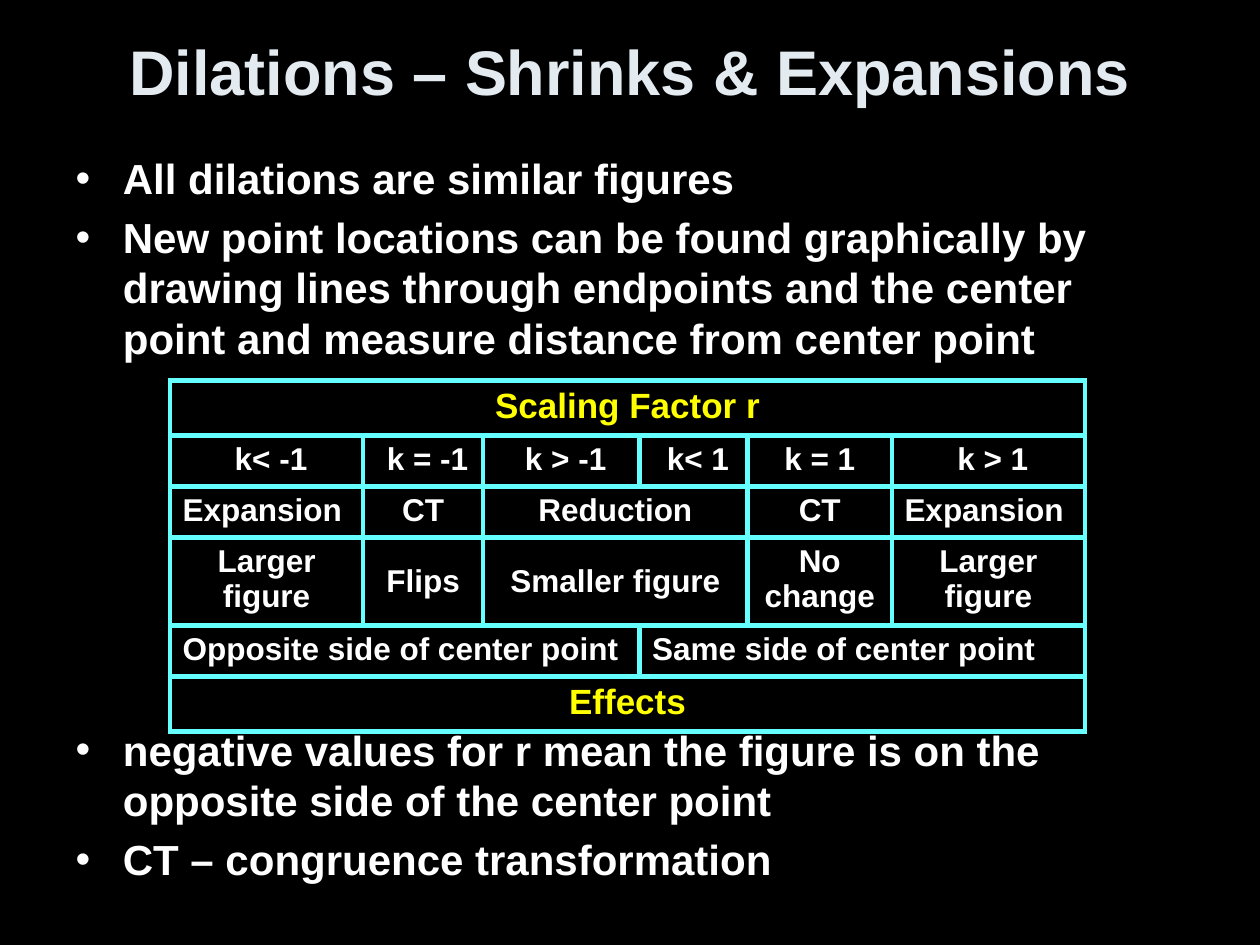
import pptx
import pptx.dml.color
import pptx.enum.text
import pptx.oxml
import pptx.oxml.ns
import pptx.util
from lxml import etree

Cm = pptx.util.Cm
Pt = pptx.util.Pt
ALIGN = pptx.enum.text.PP_ALIGN
ANCHOR = pptx.enum.text.MSO_ANCHOR

BLACK, WHITE, PALE = "000000", "FFFFFF", "E3EBF1"
YELLOW, CYAN = "FFFF00", "66FFFF"

BULLETS = [
    "All dilations are similar figures",
    "New point locations can be found graphically by drawing lines through "
    "endpoints and the center point and measure distance from center point",
    "negative values for r mean the figure is on the opposite side of the center point",
    "CT – congruence transformation",
]
BULLET_GAP = 4.8
TABLE_GAP = 206.6

COLUMN_WIDTHS = [3.89, 2.42, 3.15, 2.18, 2.91, 3.89]
ROW_HEIGHTS = [1.11, 1.03, 1.03, 1.77, 1.03, 1.11]
# Each row lists (text, number of columns it spans).
SCALING_ROWS = [
    [("Scaling Factor r", 6)],
    [(" k< -1", 1), (" k = -1", 1), (" k > -1", 1), (" k< 1", 1), ("k = 1", 1), (" k > 1", 1)],
    [("Expansion", 1), ("CT", 1), ("Reduction", 2), ("CT", 1), ("Expansion", 1)],
    [("Larger\nfigure", 1), ("Flips", 1), ("Smaller figure", 2), ("No\nchange", 1),
     ("Larger\nfigure", 1)],
    [("Opposite side of center point", 3), ("Same side of center point", 3)],
    [("Effects", 6)],
]
HEADINGS = {"Scaling Factor r", "Effects"}
LEFT_ALIGNED = {"Expansion", "Opposite side of center point", "Same side of center point"}
MIDDLE_ANCHORED = {"Flips", "Smaller figure"}


def color(value):
    return pptx.dml.color.RGBColor.from_string(value)


class SlideBuilder:
    font_name = "Arial"
    border_width = Pt(3)

    def __init__(self, page):
        self.page = page

    def background(self, value):
        fill = self.page.background.fill
        fill.solid()
        fill.fore_color.rgb = color(value)

    def style(self, paragraph, size, value, align):
        paragraph.alignment = align
        font = paragraph.font
        font.name, font.size, font.bold = self.font_name, Pt(size), True
        font.color.rgb = color(value)

    def place(self, box, left, top, width, height):
        box.left, box.top, box.width, box.height = Cm(left), Cm(top), Cm(width), Cm(height)
        box.text_frame.auto_size = pptx.enum.text.MSO_AUTO_SIZE.NONE

    def title(self, text, *bounds):
        box = self.page.shapes.title
        self.place(box, *bounds)
        box.text_frame.vertical_anchor = ANCHOR.MIDDLE
        paragraph = box.text_frame.paragraphs[0]
        paragraph.text = text
        self.style(paragraph, 36, PALE, ALIGN.CENTER)

    def bullets(self, lines, gaps, *bounds):
        box = self.page.placeholders[1]
        self.place(box, *bounds)
        box.text_frame.text = "\n".join(lines)
        for paragraph, gap in zip(box.text_frame.paragraphs, gaps):
            self.style(paragraph, 24, WHITE, ALIGN.LEFT)
            paragraph.line_spacing = Pt(28.8)
            paragraph.space_before = Pt(gap)

    def table(self, rows, widths, heights, left, top):
        frame = self.page.shapes.add_table(
            len(heights), len(widths), Cm(left), Cm(top), Cm(sum(widths)), Cm(sum(heights)))
        table = frame.table
        table.first_row = table.horz_banding = False
        for column, width in zip(table.columns, widths):
            column.width = Cm(width)
        for row, height in zip(table.rows, heights):
            row.height = Cm(height)
        for cell in table.iter_cells():
            self.borders(cell)
            cell.fill.background()
        for row_index, entries in enumerate(rows):
            column_index = 0
            for text, span in entries:
                cell = table.cell(row_index, column_index)
                column_index += span
                if span > 1:
                    cell.merge(table.cell(row_index, column_index - 1))
                self.cell_text(cell, text)

    def cell_text(self, cell, text):
        paragraph = cell.text_frame.paragraphs[0]
        paragraph.text = text
        size, value = (20, YELLOW) if text in HEADINGS else (18, WHITE)
        self.style(paragraph, size, value, ALIGN.LEFT if text in LEFT_ALIGNED else ALIGN.CENTER)
        cell.vertical_anchor = ANCHOR.MIDDLE if text in MIDDLE_ANCHORED else ANCHOR.TOP

    def borders(self, cell):
        qualified = pptx.oxml.ns.qn
        properties = cell._tc.get_or_add_tcPr()
        for side in ("lnL", "lnR", "lnT", "lnB"):
            line = etree.SubElement(properties, qualified("a:" + side), w=str(self.border_width))
            fill = etree.SubElement(line, qualified("a:solidFill"))
            etree.SubElement(fill, qualified("a:srgbClr"), val=CYAN)


def main():
    deck = pptx.Presentation()
    deck.slide_width, deck.slide_height = Cm(25.4), Cm(19.05)
    builder = SlideBuilder(deck.slides.add_slide(deck.slide_layouts[1]))
    builder.background(BLACK)
    builder.title("Dilations – Shrinks & Expansions", 1.27, 0.36, 22.86, 2.13)
    builder.bullets(BULLETS, [BULLET_GAP, BULLET_GAP, TABLE_GAP, BULLET_GAP],
                    1.27, 2.95, 22.86, 15.54)
    builder.table(SCALING_ROWS, COLUMN_WIDTHS, ROW_HEIGHTS, 3.43, 7.67)
    deck.save("out.pptx")


if __name__ == "__main__":
    main()
